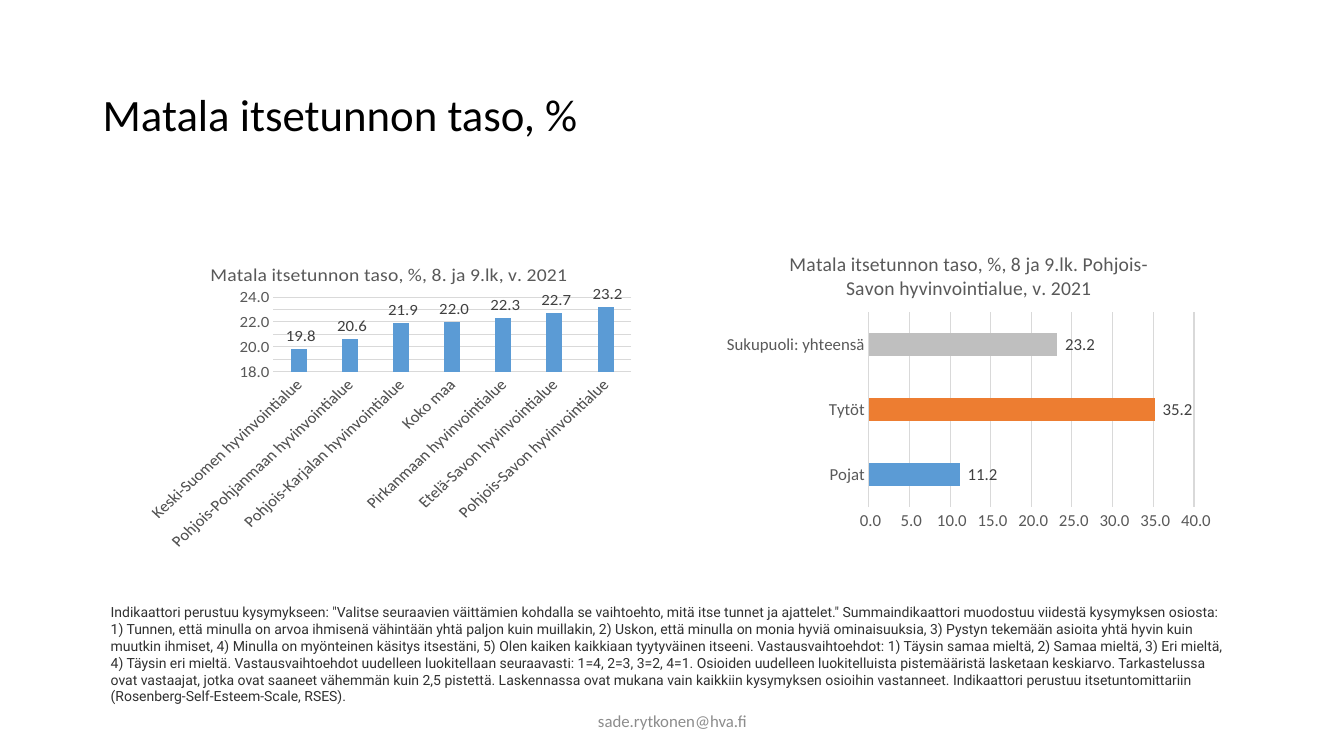
from pptx import Presentation
from pptx.chart.data import CategoryChartData
from pptx.dml.color import RGBColor
from pptx.enum.chart import XL_CHART_TYPE, XL_LABEL_POSITION, XL_TICK_MARK
from pptx.enum.text import MSO_ANCHOR, PP_ALIGN
from pptx.util import Inches, Pt

COLUMN, BAR = XL_CHART_TYPE.COLUMN_CLUSTERED, XL_CHART_TYPE.BAR_CLUSTERED
OUT_END, NO_TICK = XL_LABEL_POSITION.OUTSIDE_END, XL_TICK_MARK.NONE
TOP, MIDDLE = MSO_ANCHOR.TOP, MSO_ANCHOR.MIDDLE
LEFT, CENTER = PP_ALIGN.LEFT, PP_ALIGN.CENTER

BLACK = RGBColor(0x00, 0x00, 0x00)
DARK = RGBColor(0x30, 0x30, 0x30)
LABEL = RGBColor(0x40, 0x40, 0x40)
GREY = RGBColor(0x59, 0x59, 0x59)
FOOT = RGBColor(0x8C, 0x8C, 0x8C)
GRID = RGBColor(0xD9, 0xD9, 0xD9)
BLUE = RGBColor(0x5B, 0x9B, 0xD5)
ORANGE = RGBColor(0xED, 0x7D, 0x31)
SILVER = RGBColor(0xBF, 0xBF, 0xBF)

AREAS = {
    "Keski-Suomen hyvinvointialue": 19.8,
    "Pohjois-Pohjanmaan hyvinvointialue": 20.6,
    "Pohjois-Karjalan hyvinvointialue": 21.9,
    "Koko maa": 22.0,
    "Pirkanmaan hyvinvointialue": 22.3,
    "Etelä-Savon hyvinvointialue": 22.7,
    "Pohjois-Savon hyvinvointialue": 23.2,
}
GENDERS = {"Pojat": 11.2, "Tytöt": 35.2, "Sukupuoli: yhteensä": 23.2}

# Sentences of the note, joined by spaces
NOTE = (
    'Indikaattori perustuu kysymykseen: "Valitse seuraavien väittämien kohdalla '
    'se vaihtoehto, mitä itse tunnet ja ajattelet."',
    "Summaindikaattori muodostuu viidestä kysymyksen osiosta:",
    "1) Tunnen, että minulla on arvoa ihmisenä vähintään yhtä paljon kuin "
    "muillakin,",
    "2) Uskon, että minulla on monia hyviä ominaisuuksia,",
    "3) Pystyn tekemään asioita yhtä hyvin kuin muutkin ihmiset,",
    "4) Minulla on myönteinen käsitys itsestäni,",
    "5) Olen kaiken kaikkiaan tyytyväinen itseeni.",
    "Vastausvaihtoehdot: 1) Täysin samaa mieltä, 2) Samaa mieltä, "
    "3) Eri mieltä, 4) Täysin eri mieltä.",
    "Vastausvaihtoehdot uudelleen luokitellaan seuraavasti: "
    "1=4, 2=3, 3=2, 4=1.",
    "Osioiden uudelleen luokitelluista pistemääristä lasketaan keskiarvo.",
    "Tarkastelussa ovat vastaajat, jotka ovat saaneet vähemmän kuin "
    "2,5 pistettä.",
    "Laskennassa ovat mukana vain kaikkiin kysymyksen osioihin vastanneet.",
    "Indikaattori perustuu itsetuntomittariin "
    "(Rosenberg-Self-Esteem-Scale, RSES).",
)


class Page:
    face = "Calibri"
    form = "#\\ ##0.0"

    def __init__(self, deck):
        self.slide = deck.slides.add_slide(deck.slide_layouts[6])

    def style(self, font, size, color, face=None):
        font.name = face or self.face
        font.size = Pt(size)
        font.color.rgb = color
        font.bold = False

    def text(self, box, words, size, color, face=None, align=LEFT, anchor=TOP):
        shape = self.slide.shapes.add_textbox(*map(Inches, box))
        frame = shape.text_frame
        frame.word_wrap = True
        frame.vertical_anchor = anchor
        para = frame.paragraphs[0]
        para.alignment = align
        run = para.add_run()
        run.text = words
        self.style(run.font, size, color, face)

    def chart(self, box, kind, title, rows, gap, lap, scale, tints=()):
        data = CategoryChartData(number_format=self.form)
        data.categories = list(rows)
        data.add_series("Series 1", list(rows.values()))
        frame = self.slide.shapes.add_chart(kind, *map(Inches, box), data)
        chart = frame.chart
        self.style(chart.font, 12, BLACK)
        chart.has_legend = False

        # Title
        chart.has_title = True
        chart.chart_title.include_in_layout = False
        run = chart.chart_title.text_frame.paragraphs[0].add_run()
        run.text = title
        self.style(run.font, 14, GREY)

        # Axes
        cat, val = chart.category_axis, chart.value_axis
        for axis in (cat, val):
            axis.major_tick_mark = axis.minor_tick_mark = NO_TICK
            self.style(axis.tick_labels.font, 12, GREY)
        val.minimum_scale, val.maximum_scale, val.major_unit = scale
        val.tick_labels.number_format = self.form
        val.tick_labels.number_format_is_linked = False
        val.format.line.fill.background()
        val.has_major_gridlines = True
        for line in (cat.format.line, val.major_gridlines.format.line):
            line.color.rgb = GRID
            line.width = Pt(0.75)

        # Bars and their values
        plot = chart.plots[0]
        plot.gap_width, plot.overlap = gap, lap
        plot.vary_by_categories = False
        bars = plot.series[0]
        bars.invert_if_negative = False
        bars.format.fill.solid()
        bars.format.fill.fore_color.rgb = BLUE
        for spot, tint in enumerate(tints):
            fill = bars.points[spot].format.fill
            fill.solid()
            fill.fore_color.rgb = tint
        tags = bars.data_labels
        tags.show_value = True
        tags.position = OUT_END
        tags.number_format = self.form
        tags.number_format_is_linked = False
        self.style(tags.font, 12, LABEL)
        return chart

    def slant(self, axis, angle):
        body = axis._element.txPr.find(
            "{http://schemas.openxmlformats.org/drawingml/2006/main}bodyPr")
        body.set("rot", str(angle * 60000))
        body.set("vert", "horz")


def main():
    deck = Presentation()
    deck.slide_width, deck.slide_height = Inches(13.33), Inches(7.5)
    page = Page(deck)

    # Heading and footer
    page.text((0.92, 0.4, 11.5, 1.45), "Matala itsetunnon taso, %", 32, BLACK,
              anchor=MIDDLE)
    page.text((4.42, 6.95, 4.5, 0.4), "sade.rytkonen@hva.fi", 12, FOOT,
              align=CENTER, anchor=MIDDLE)

    # Charts by area and by gender
    areas = page.chart((1.36, 2.46, 5, 3), COLUMN,
                       "Matala itsetunnon taso, %, 8. ja 9.lk, v. 2021",
                       AREAS, 219, -27, (18, 24, 1))
    page.slant(areas.category_axis, -45)
    page.chart((7.11, 2.33, 5, 3), BAR,
               "Matala itsetunnon taso, %, 8 ja 9.lk. "
               "Pohjois-Savon hyvinvointialue, v. 2021",
               GENDERS, 182, 0, (0, 40, 5), (BLUE, ORANGE, SILVER))

    # Note on the indicator
    page.text((1, 5.94, 11.33, 1.11), " ".join(NOTE), 10, DARK, "Roboto")

    deck.save("out.pptx")


if __name__ == "__main__":
    main()
